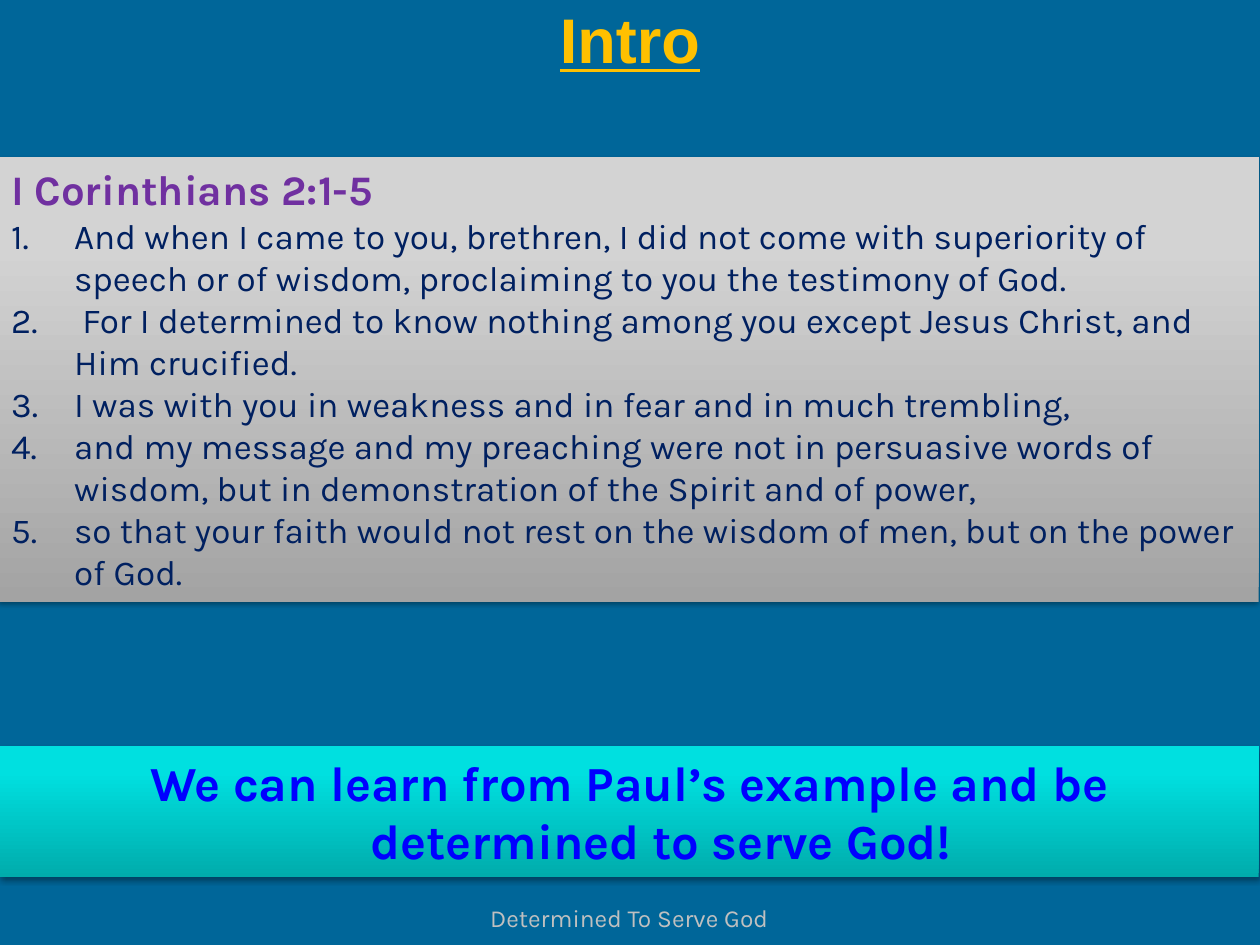
from lxml.etree import SubElement
from pptx import Presentation
from pptx.dml.color import RGBColor
from pptx.enum.shapes import MSO_SHAPE
from pptx.enum.text import MSO_ANCHOR, PP_ALIGN
from pptx.oxml import parse_xml
from pptx.oxml.ns import nsdecls, qn
from pptx.util import Inches, Pt

SEA = RGBColor(0x00, 0x66, 0x99)
GOLD = RGBColor(0xFF, 0xC0, 0x00)
SILVER = RGBColor(0xC0, 0xC0, 0xC0)
PURPLE = RGBColor(0x70, 0x30, 0xA0)
NAVY = RGBColor(0x00, 0x20, 0x60)
BLUE = RGBColor(0x00, 0x00, 0xFF)
GREYS = [RGBColor(0xA3, 0xA3, 0xA3), RGBColor(0xD3, 0xD3, 0xD3), RGBColor(0xD4, 0xD4, 0xD4)]
TEALS = [RGBColor(0x00, 0xAC, 0xAC), RGBColor(0x00, 0xE0, 0xE0), RGBColor(0x00, 0xE1, 0xE1)]

VERSES = [
    "And when I came to you, brethren, I did not come with superiority of speech or of wisdom, proclaiming to you the testimony of God.",
    " For I determined to know nothing among you except Jesus Christ, and Him crucified.",
    "I was with you in weakness and in fear and in much trembling,",
    "and my message and my preaching were not in persuasive words of wisdom, but in demonstration of the Spirit and of power,",
    "so that your faith would not rest on the wisdom of men, but on the power of God.",
]

deck = Presentation()
deck.slide_width, deck.slide_height = Inches(10), Inches(7.5)
slide = deck.slides.add_slide(deck.slide_layouts[6])
slide.background.fill.solid()
slide.background.fill.fore_color.rgb = SEA


def style(para, size, color, bold=False, face="Karla", align=PP_ALIGN.CENTER):
    para.alignment = align
    for run in para.runs:
        font = run.font
        font.name, font.size, font.bold = face, Pt(size), bold
        font.color.rgb = color


def add_band(left, top, width, height, colors, lines):
    band = slide.shapes.add_shape(
        MSO_SHAPE.RECTANGLE, Inches(left), Inches(top), Inches(width), Inches(height))
    band.line.fill.background()
    band.shadow.inherit = False
    props = band.element.spPr
    # Gradient from the bottom edge up
    stops = "".join(
        f'<a:gs pos="{pos}000"><a:srgbClr val="{color}"/></a:gs>'
        for pos, color in zip((0, 80, 100), colors))
    props.find(qn("a:prstGeom")).addnext(parse_xml(
        f'<a:gradFill {nsdecls("a")} rotWithShape="1"><a:gsLst>{stops}</a:gsLst>'
        '<a:lin ang="16200000" scaled="0"/></a:gradFill>'))
    # Soft shadow below
    props.find(qn("a:effectLst")).append(parse_xml(
        f'<a:outerShdw {nsdecls("a")} blurRad="{Pt(3.1)}" dist="{Pt(1.8)}" dir="5400000" '
        'rotWithShape="0"><a:srgbClr val="000000"><a:alpha val="35000"/>'
        '</a:srgbClr></a:outerShdw>'))
    # Hanging paragraphs
    frame = band.text_frame
    frame.word_wrap = True
    frame.vertical_anchor = MSO_ANCHOR.TOP
    frame.text = "\n".join(lines)
    for para in frame.paragraphs:
        hang = para._p.get_or_add_pPr()
        hang.set("marL", str(Inches(0.5)))
        hang.set("indent", str(-Inches(0.5)))
    return frame.paragraphs


# Title and footer
for text, box, size, color, face in [
    ("Intro", (0, 0, 10, 0.61), 36, GOLD, "Arial"),
    ("Determined To Serve God", (2.58, 7.12, 4.83, 0.38), 14, SILVER, "Karla"),
]:
    frame = slide.shapes.add_textbox(*map(Inches, box)).text_frame
    frame.word_wrap = True
    frame.text = text
    head = text == "Intro"
    frame.vertical_anchor = MSO_ANCHOR.MIDDLE if head else MSO_ANCHOR.TOP
    style(frame.paragraphs[0], size, color, head, face)
    if head:
        frame.paragraphs[0].runs[0].font.underline = True

# Scripture passage
first, *rest = add_band(-0.01, 1.25, 10, 3.53, GREYS, ["I Corinthians 2:1-5", *VERSES])
style(first, 24, PURPLE, True, align=PP_ALIGN.LEFT)
for para in rest:
    SubElement(para._p.pPr, qn("a:buFont"), typeface="+mj-lt")
    SubElement(para._p.pPr, qn("a:buAutoNum"), type="arabicPeriod")
    style(para, 20, NAVY, align=PP_ALIGN.LEFT)

# Closing lesson
lesson = add_band(0, 5.92, 9.99, 1.04, TEALS,
                  ["We can learn from Paul’s example and be determined to serve God!"])
style(lesson[0], 28, BLUE, True)

deck.save("out.pptx")
